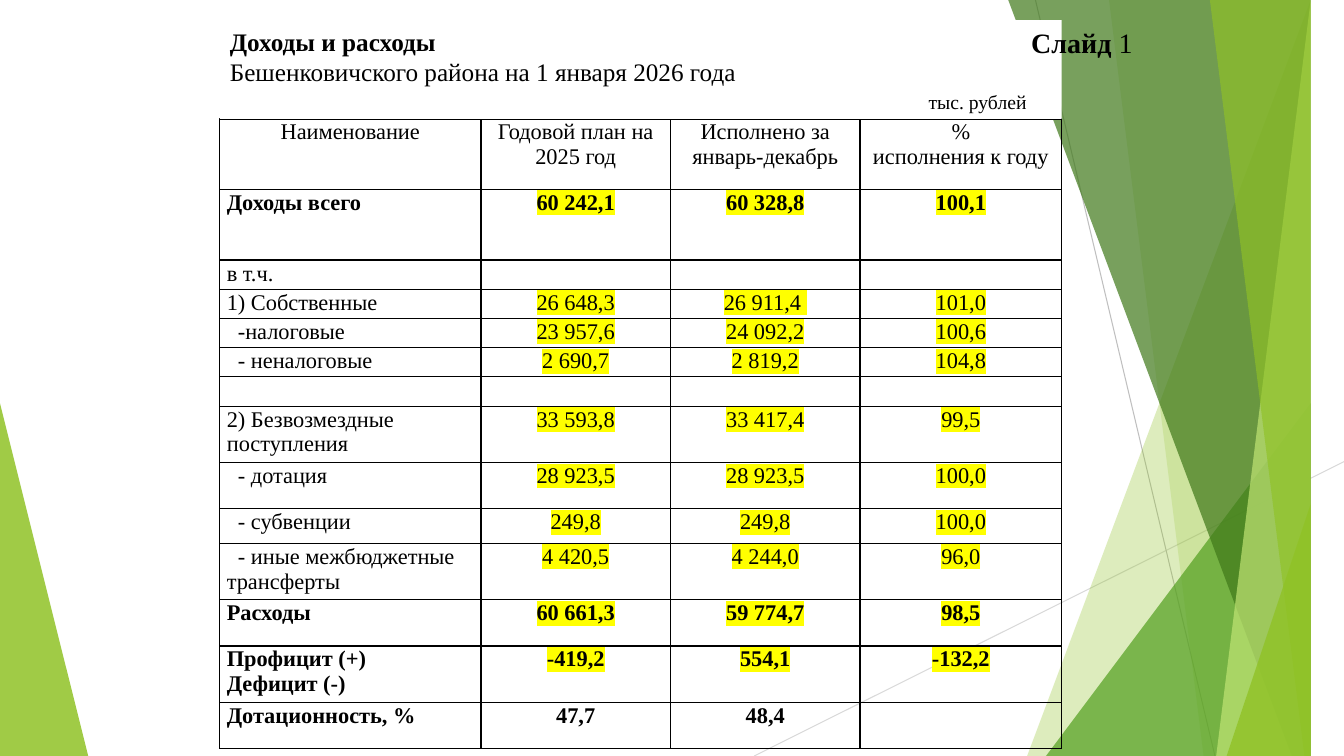
import pptx
import pptx.dml.color
import pptx.enum.shapes
import pptx.enum.text
import pptx.oxml.ns
import pptx.util
from lxml import etree

RGBColor = pptx.dml.color.RGBColor
Inches = pptx.util.Inches
Pt = pptx.util.Pt
ALIGN = pptx.enum.text.PP_ALIGN
qn = pptx.oxml.ns.qn

BLACK = RGBColor(0x00, 0x00, 0x00)
WHITE = RGBColor(0xFF, 0xFF, 0xFF)
YELLOW = RGBColor(0xFF, 0xFF, 0x00)
LIME = RGBColor(0x90, 0xC2, 0x26)
GREEN = RGBColor(0x54, 0xA0, 0x21)
DARK_GREEN = RGBColor(0x3F, 0x78, 0x19)
PALE_GREEN = RGBColor(0xC0, 0xE4, 0x74)
LIGHT_GREY = RGBColor(0xD9, 0xD9, 0xD9)
GREY = RGBColor(0xBF, 0xBF, 0xBF)
FONT = "Times New Roman"

WIDTH, HEIGHT = 13.33, 7.5
LEFT, TOP, TABLE_WIDTH, HEADING_HEIGHT = 2.18, 0.2, 8.35, 0.98
COLUMN_WIDTHS = [2.59, 1.88, 1.88, 2.0]
UNIT_INDENT = 6.93
ITEM_INDENT = 0.11

# text, size, bold
HEADING = [
    ("Доходы и расходы", 18, True),
    ("Бешенковичского района на 1 января 2026 года", 18, False),
    ("тыс. рублей", 14, False),
]
SLIDE_LABEL = [("Слайд", True), (" 1", False)]

# row height, style letters (b bold, h highlighted values, i indented name), cells
ROWS = [
    (0.70, "", ["Наименование", "Годовой план на 2025 год",
                "Исполнено за январь-декабрь", "%\nисполнения к году"]),
    (0.70, "bh", ["Доходы всего", "60 242,1", "60 328,8", "100,1"]),
    (0.29, "", ["в т.ч.", "", "", ""]),
    (0.29, "h", ["1) Собственные", "26 648,3", "26 911,4 ", "101,0"]),
    (0.29, "hi", ["-налоговые", "23 957,6", "24 092,2", "100,6"]),
    (0.29, "hi", ["- неналоговые", "2 690,7", "2 819,2", "104,8"]),
    (0.29, "", ["", "", "", ""]),
    (0.56, "h", ["2) Безвозмездные поступления", "33 593,8", "33 417,4", "99,5"]),
    (0.46, "hi", ["- дотация", "28 923,5", "28 923,5", "100,0"]),
    (0.34, "hi", ["- субвенции", "249,8", "249,8", "100,0"]),
    (0.56, "hi", ["- иные межбюджетные трансферты", "4 420,5", "4 244,0", "96,0"]),
    (0.46, "bh", ["Расходы", "60 661,3", "59 774,7", "98,5"]),
    (0.56, "bh", ["Профицит (+)\nДефицит (-)", "-419,2", "554,1", "-132,2"]),
    (0.46, "b", ["Дотационность, %", "47,7", "48,4", ""]),
]

LEFT_FACET = (LIME, 85, [(0, 4.39), (0.65, HEIGHT), (0, HEIGHT)])
RAYS = [
    (LIGHT_GREY, (7.48, HEIGHT), (WIDTH, 4.58)),
    (GREY, (10.27, 0), (12.05, HEIGHT)),
]
# colour, opacity in percent, corners
RIGHT_FACETS = [
    (LIME, 30, [(13, 0), (10.05, HEIGHT), (WIDTH, HEIGHT), (WIDTH, 0)]),
    (LIME, 20, [(10.51, 0), (12.26, HEIGHT), (WIDTH, HEIGHT), (WIDTH, 0)]),
    (GREEN, 72, [(9.68, HEIGHT), (WIDTH, 4.29), (WIDTH, HEIGHT)]),
    (DARK_GREEN, 70, [(10.22, 0), (12.93, HEIGHT), (WIDTH, HEIGHT), (WIDTH, 0)]),
    (PALE_GREEN, 70, [(13.08, 0), (12.1, HEIGHT), (WIDTH, HEIGHT), (WIDTH, 0)]),
    (LIME, 65, [(11.78, 0), (13.15, HEIGHT), (WIDTH, HEIGHT), (WIDTH, 0)]),
    (LIME, 80, [(11.75, HEIGHT), (WIDTH, 5.35), (WIDTH, HEIGHT)]),
]


def add_facet(slide, color, opacity, corners):
    builder = slide.shapes.build_freeform(*corners[0], scale=Inches(1))
    builder.add_line_segments(corners[1:], close=True)
    shape = builder.convert_to_shape()
    shape.shadow.inherit = False
    shape.fill.solid()
    shape.fill.fore_color.rgb = color
    shape.line.fill.background()
    fill_color = shape._element.spPr.find(".//" + qn("a:srgbClr"))
    etree.SubElement(fill_color, qn("a:alpha"), val=str(opacity * 1000))


def add_ray(slide, color, start, end):
    points = [Inches(value) for value in start + end]
    line = slide.shapes.add_connector(pptx.enum.shapes.MSO_CONNECTOR.STRAIGHT, *points)
    line.line.color.rgb = color
    line.line.width = Pt(0.75)
    etree.SubElement(line._element.spPr, qn("a:effectLst"))


def format_run(run, size, bold, highlighted=False):
    run.font.size = Pt(size)
    run.font.bold = bold
    run.font.color.rgb = BLACK
    if highlighted:
        highlight = etree.SubElement(run.font._element, qn("a:highlight"))
        etree.SubElement(highlight, qn("a:srgbClr"), val=str(YELLOW))
    run.font.name = FONT


def add_borders(cell):
    properties = cell._tc.get_or_add_tcPr()
    for position, side in enumerate(("a:lnL", "a:lnR", "a:lnT", "a:lnB")):
        border = etree.Element(qn(side), w=str(Pt(1)))
        fill = etree.SubElement(border, qn("a:solidFill"))
        etree.SubElement(fill, qn("a:srgbClr"), val=str(BLACK))
        properties.insert(position, border)


def fill_cell(cell, text, style, is_name, centred):
    cell.margin_left = cell.margin_right = Inches(0.07)
    cell.margin_top, cell.margin_bottom = Inches(0.01), 0
    cell.fill.background()
    add_borders(cell)
    cell.text_frame.text = text
    for paragraph in cell.text_frame.paragraphs:
        paragraph.alignment = ALIGN.CENTER if centred else ALIGN.LEFT
        if is_name and "i" in style:
            paragraph._p.get_or_add_pPr().set("indent", str(Inches(ITEM_INDENT)))
        for run in paragraph.runs:
            format_run(run, 16, "b" in style, "h" in style and not is_name)
        if not text:
            etree.SubElement(paragraph._p, qn("a:endParaRPr"), sz="1600")


def add_budget_table(slide):
    frame = slide.shapes.add_table(
        len(ROWS), len(COLUMN_WIDTHS), Inches(LEFT), Inches(TOP + HEADING_HEIGHT),
        Inches(TABLE_WIDTH), Inches(sum(row[0] for row in ROWS)))
    table = frame.table
    table.first_row = table.horz_banding = False
    for column, width in zip(table.columns, COLUMN_WIDTHS):
        column.width = Inches(width)
    for row_index, (height, style, texts) in enumerate(ROWS):
        table.rows[row_index].height = Inches(height)
        for column_index, text in enumerate(texts):
            fill_cell(table.cell(row_index, column_index), text, style,
                      is_name=column_index == 0,
                      centred=row_index == 0 or column_index > 0)


def place_heading(slide):
    """Fill the title and bring it in front of the facets."""
    title = slide.shapes.title
    slide.shapes._spTree.append(title._element)
    title.left, title.top = Inches(LEFT), Inches(TOP)
    title.width, title.height = Inches(TABLE_WIDTH), Inches(HEADING_HEIGHT)
    title.fill.solid()
    title.fill.fore_color.rgb = WHITE
    text_frame = title.text_frame
    text_frame.text = "\n".join(text for text, size, bold in HEADING)
    text_frame.auto_size = pptx.enum.text.MSO_AUTO_SIZE.NONE
    text_frame.vertical_anchor = pptx.enum.text.MSO_ANCHOR.MIDDLE
    for paragraph, (text, size, bold) in zip(text_frame.paragraphs, HEADING):
        paragraph.alignment = ALIGN.LEFT
        format_run(paragraph.runs[0], size, bold)
    unit = text_frame.paragraphs[-1]
    unit.space_before = Pt(2)
    unit._p.get_or_add_pPr().set("marL", str(Inches(UNIT_INDENT)))


def add_slide_label(slide):
    box = slide.shapes.add_textbox(Inches(10.13), Inches(TOP), Inches(1.34), Inches(0.44))
    box.text_frame.word_wrap = True
    for text, bold in SLIDE_LABEL:
        run = box.text_frame.paragraphs[0].add_run()
        run.text = text
        format_run(run, 20, bold)


def main():
    presentation = pptx.Presentation()
    presentation.slide_width = Inches(WIDTH)
    presentation.slide_height = Inches(HEIGHT)
    slide = presentation.slides.add_slide(presentation.slide_layouts.get_by_name("Title Only"))
    add_facet(slide, *LEFT_FACET)
    for ray in RAYS:
        add_ray(slide, *ray)
    for facet in RIGHT_FACETS:
        add_facet(slide, *facet)
    add_budget_table(slide)
    place_heading(slide)
    add_slide_label(slide)
    presentation.save("out.pptx")


if __name__ == "__main__":
    main()
